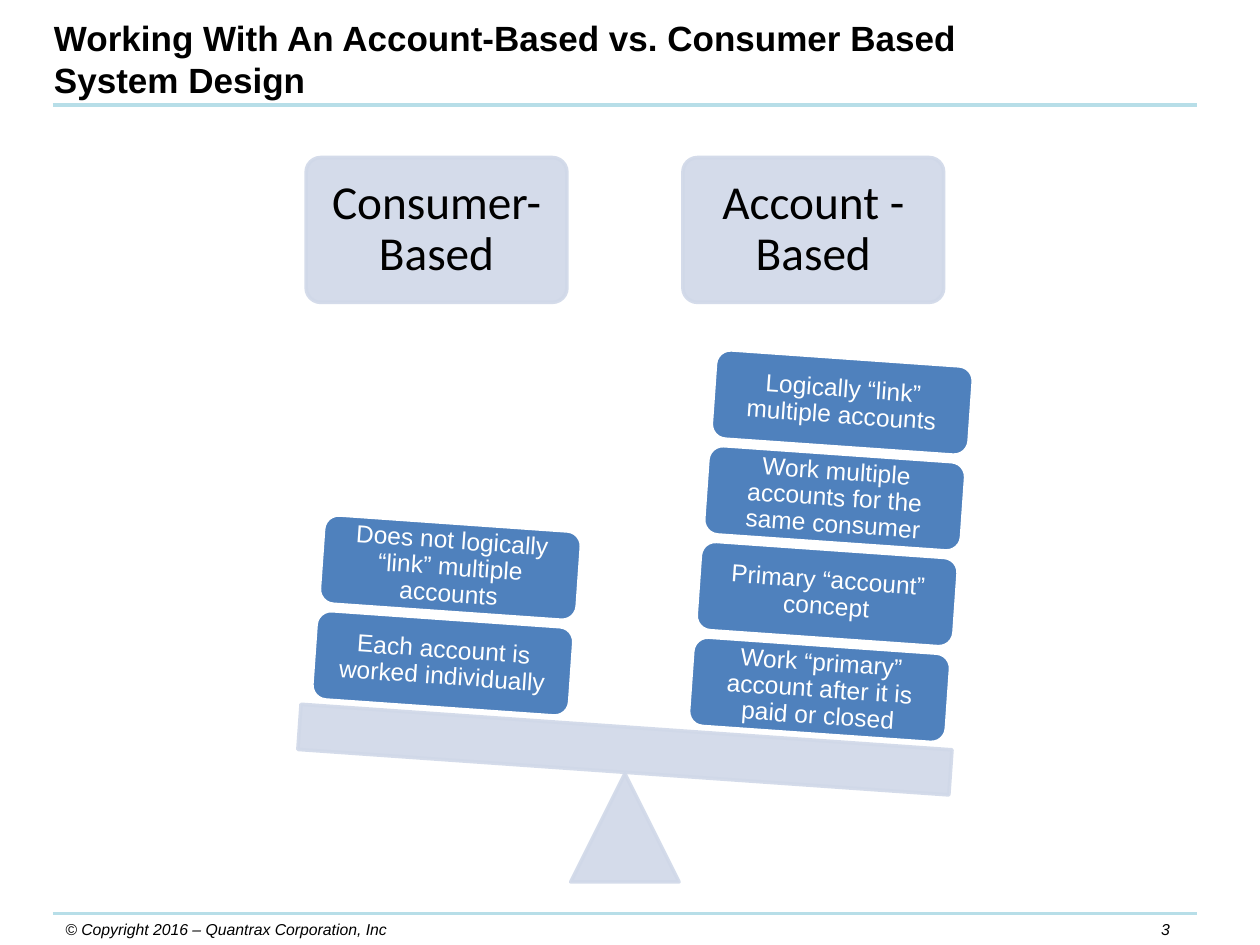
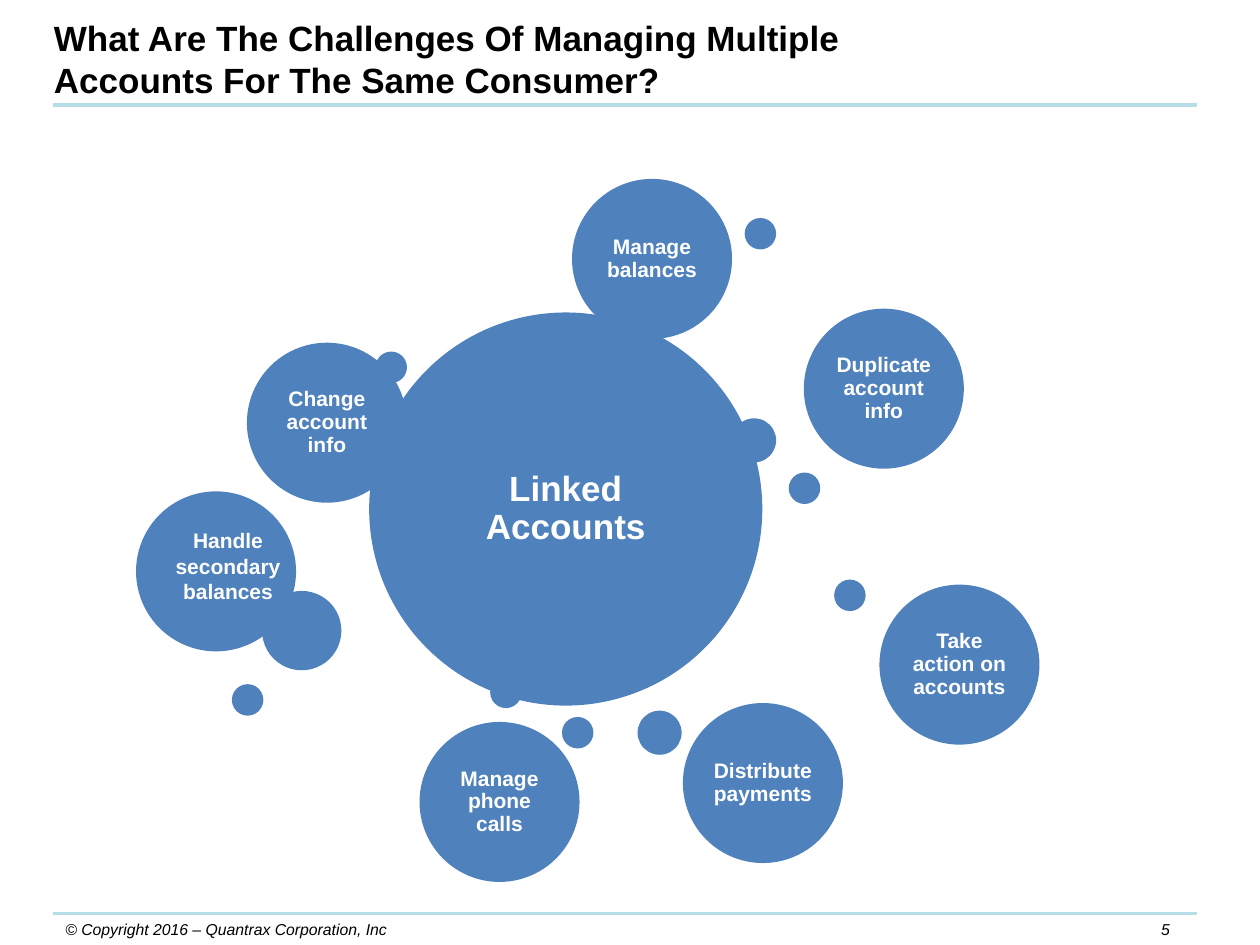
from dataclasses import dataclass

from lxml import etree
from pptx import Presentation
from pptx.dml.color import RGBColor
from pptx.enum import shapes, text
from pptx.oxml.ns import qn
from pptx.util import Inches, Pt

BLACK = RGBColor(0x00, 0x00, 0x00)
WHITE = RGBColor(0xFF, 0xFF, 0xFF)
RULE_BLUE = RGBColor(0xB7, 0xDE, 0xE8)
PALE_BLUE = RGBColor(0xD0, 0xD8, 0xE8)
BLUE = RGBColor(0x4F, 0x81, 0xBD)

FONT = "Arial"
HEADER_FONT = "Calibri"
COPYRIGHT = "© Copyright 2016 – Quantrax Corporation, Inc"
RULE_TOPS = (0.83, 7.25)
RULE_LEFT, RULE_RIGHT = 0.42, 9.5

TILT = 4
BLOCK_WIDTH, BLOCK_HEIGHT = 2.05, 0.71
BLOCK_STEP_X, BLOCK_STEP_Y = 0.06, -0.76
BUBBLE_SIZE = 1.27


@dataclass(frozen=True)
class Box:
    """Position and size in inches."""
    left: float
    top: float
    width: float
    height: float

    def lengths(self) -> tuple:
        """Return the four measures as lengths."""
        return tuple(map(Inches, (self.left, self.top, self.width, self.height)))


@dataclass(frozen=True)
class Side:
    """One side of the scale: its heading and its blocks from the bottom up."""
    heading: str
    heading_left: float
    stack_left: float
    stack_top: float
    blocks: tuple


@dataclass(frozen=True)
class Bubble:
    """A labelled circle."""
    label: str
    left: float
    top: float
    size: float = BUBBLE_SIZE
    font_size: float = 12
    inset: float = 0.05


@dataclass(frozen=True)
class Dot:
    """A small circle without a label."""
    left: float
    top: float
    size: float = 0.25


SIDES = (
    Side("Consumer-Based", 2.43, 2.49, 4.91, (
        "Each account is worked individually",
        "Does not logically “link” multiple accounts",
    )),
    Side("Account - Based", 5.42, 5.48, 5.12, (
        "Work “primary” account after it is paid or closed",
        "Primary “account” concept",
        "Work multiple accounts for the same consumer",
        "Logically “link” multiple accounts",
    )),
)

BUBBLES = (
    Bubble("Linked Accounts", 2.93, 2.48, size=3.12, font_size=20, inset=0.08),
    Bubble("Change account info", 1.96, 2.72),
    Bubble("Duplicate account info", 6.38, 2.45),
    Bubble("Take action on accounts", 6.98, 4.64),
    Bubble("Manage phone calls", 3.33, 5.73),
    Bubble("Manage balances", 4.54, 1.42),
    Bubble("Distribute payments", 5.42, 5.58),
)

DOTS = (
    Dot(1.08, 3.9, BUBBLE_SIZE),
    Dot(2.08, 4.69, 0.63),
    Dot(5.06, 5.64, 0.35),
    Dot(4.36, 2.84, 0.35),
    Dot(5.81, 3.32, 0.35),
    Dot(3.89, 5.37),
    Dot(6.26, 3.75),
    Dot(3.96, 2.83),
    Dot(3.17, 4.27),
    Dot(1.84, 5.43),
    Dot(4.35, 5.08),
    Dot(6.62, 4.6),
    Dot(4.46, 5.69),
    Dot(2.98, 2.79),
    Dot(5.91, 1.73),
)


def write(shape, content: str, *, size: float, color=BLACK, font=FONT, bold=False, italic=False,
          align=text.PP_ALIGN.LEFT, anchor=text.MSO_ANCHOR.TOP, insets=(0.1, 0.05),
          spacing=1.0) -> None:
    """Write one formatted paragraph into a shape."""
    frame = shape.text_frame
    frame.word_wrap = True
    frame.vertical_anchor = anchor
    frame.margin_left = frame.margin_right = Inches(insets[0])
    frame.margin_top = frame.margin_bottom = Inches(insets[1])
    paragraph = frame.paragraphs[0]
    paragraph.alignment = align
    paragraph.line_spacing = spacing
    run = paragraph.add_run()
    run.text = content
    run.font.name = font
    run.font.size = Pt(size)
    run.font.bold = bold
    run.font.italic = italic
    run.font.color.rgb = color


def write_centered(shape, content: str, *, inset: float, spacing=0.9, color=WHITE, **style) -> None:
    """Write a label in the middle of a shape."""
    write(shape, content, color=color, align=text.PP_ALIGN.CENTER, anchor=text.MSO_ANCHOR.MIDDLE,
          insets=(inset, inset), spacing=spacing, **style)


def add_text(slide, box: Box, content: str, **style) -> None:
    """Add a text box."""
    write(slide.shapes.add_textbox(*box.lengths()), content, **style)


def add_shape(slide, kind, box: Box, *, fill=BLUE, outline=None, rotation=0):
    """Add a filled preset shape with an optional outline."""
    shape = slide.shapes.add_shape(kind, *box.lengths())
    shape.shadow.inherit = False
    shape.rotation = rotation
    shape.fill.solid()
    shape.fill.fore_color.rgb = fill
    if outline is None:
        shape.line.fill.background()
    else:
        shape.line.color.rgb = outline
        shape.line.width = Pt(2)
    return shape


def add_pale_shape(slide, kind, box: Box, rotation=0):
    """Add a pale shape whose fill and outline are 90% opaque."""
    shape = add_shape(slide, kind, box, fill=PALE_BLUE, outline=PALE_BLUE, rotation=rotation)
    for color in shape.element.spPr.iter(qn("a:srgbClr")):
        etree.SubElement(color, qn("a:alpha")).set("val", "90000")
    return shape


def add_rule(slide, top: float) -> None:
    """Add a horizontal rule across the slide."""
    rule = slide.shapes.add_connector(shapes.MSO_CONNECTOR.STRAIGHT, Inches(RULE_LEFT), Inches(top),
                                      Inches(RULE_RIGHT), Inches(top))
    rule.line.color.rgb = RULE_BLUE
    rule.line.width = Pt(2.25)
    etree.SubElement(rule.element.spPr, qn("a:effectLst"))


def add_slide(presentation, title: str, number: int, title_width: float):
    """Add a slide with its title, rules and footer."""
    slide = presentation.slides.add_slide(presentation.slide_layouts[6])
    for top in RULE_TOPS:
        add_rule(slide, top)
    add_text(slide, Box(9, 7.25, 0.5, 0.25), str(number), size=9, italic=True,
             align=text.PP_ALIGN.CENTER)
    add_text(slide, Box(0.42, 7.25, 3.25, 0.25), COPYRIGHT, size=9, italic=True)
    add_text(slide, Box(0.33, 0.08, title_width, 0.77), title, size=20, bold=True)
    return slide


def add_side(slide, side: Side) -> None:
    """Draw a heading and its tilted stack of blocks."""
    rounded = shapes.MSO_SHAPE.ROUNDED_RECTANGLE
    heading = add_pale_shape(slide, rounded, Box(side.heading_left, 1.25, 2.07, 1.15))
    heading.adjustments[0] = 0.1
    write_centered(heading, side.heading, inset=0.11, size=27, font=HEADER_FONT, color=BLACK)
    for level, label in enumerate(side.blocks):
        box = Box(side.stack_left + level * BLOCK_STEP_X, side.stack_top + level * BLOCK_STEP_Y,
                  BLOCK_WIDTH, BLOCK_HEIGHT)
        block = add_shape(slide, rounded, box, outline=WHITE, rotation=TILT)
        write_centered(block, label, inset=0.06, size=14)


def build_scale_slide(presentation) -> None:
    """Build the slide that weighs the two system designs."""
    slide = add_slide(presentation, "Working With An Account-Based vs. Consumer Based System Design",
                      3, 7.58)
    add_pale_shape(slide, shapes.MSO_SHAPE.ISOSCELES_TRIANGLE, Box(4.53, 6.14, 0.86, 0.86))
    add_pale_shape(slide, shapes.MSO_SHAPE.RECTANGLE, Box(2.37, 5.77, 5.18, 0.36), rotation=TILT)
    for side in SIDES:
        add_side(slide, side)


def build_bubble_slide(presentation) -> None:
    """Build the slide with the challenges around linked accounts."""
    slide = add_slide(
        presentation,
        "What Are The Challenges Of Managing Multiple Accounts For The Same Consumer?", 5, 7.33)
    oval = shapes.MSO_SHAPE.OVAL
    for dot in DOTS:
        add_shape(slide, oval, Box(dot.left, dot.top, dot.size, dot.size))
    for bubble in BUBBLES:
        circle = add_shape(slide, oval, Box(bubble.left, bubble.top, bubble.size, bubble.size))
        write_centered(circle, bubble.label, inset=bubble.inset, size=bubble.font_size, bold=True)
    secondary_label = slide.shapes.add_textbox(*Box(1.27, 4, 1.08, 0.98).lengths())
    write_centered(secondary_label, "Handle secondary balances", inset=0.05, spacing=1.0,
                   size=12, bold=True)


def main() -> None:
    """Build and save the presentation."""
    presentation = Presentation()
    presentation.slide_width = Inches(10)
    presentation.slide_height = Inches(7.5)
    build_scale_slide(presentation)
    build_bubble_slide(presentation)
    presentation.save("out.pptx")


if __name__ == "__main__":
    main()
